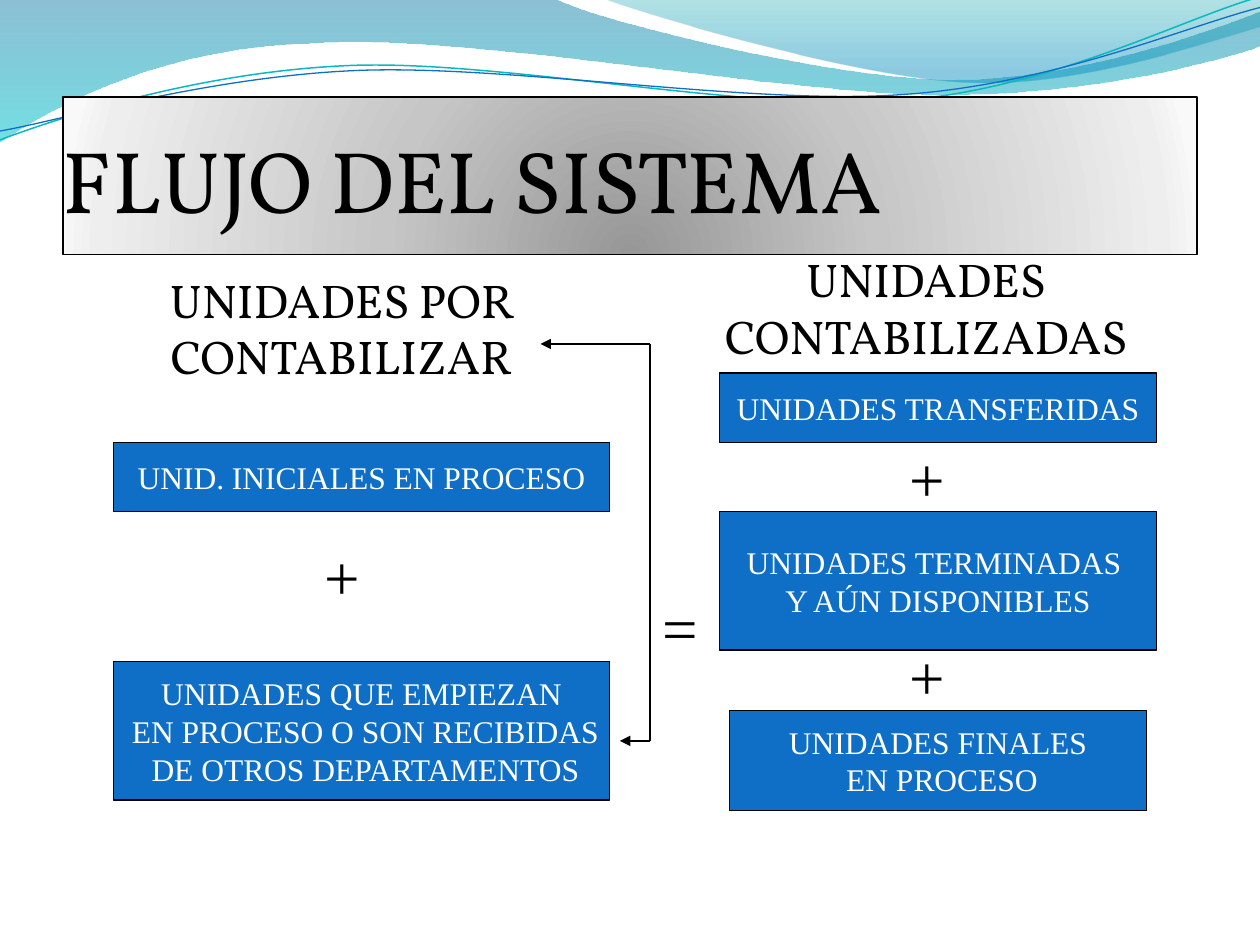
from dataclasses import dataclass
from math import cos, radians, sin

from lxml import etree
from pptx import Presentation
from pptx.dml.color import RGBColor
from pptx.enum.shapes import MSO_CONNECTOR, MSO_SHAPE
from pptx.enum.text import MSO_ANCHOR, PP_ALIGN
from pptx.oxml import parse_xml
from pptx.oxml.ns import qn
from pptx.util import Inches, Pt

RECT = MSO_SHAPE.RECTANGLE
LINE = MSO_CONNECTOR.STRAIGHT
LEFT, CENTER = PP_ALIGN.LEFT, PP_ALIGN.CENTER
TOP, MIDDLE = MSO_ANCHOR.TOP, MSO_ANCHOR.MIDDLE
NS = "http://schemas.openxmlformats.org/drawingml/2006/main"


@dataclass(frozen=True)
class Theme:
    """Colours, fonts and type sizes of the slide."""
    ink: str = "000000"
    paper: str = "FFFFFF"
    blue: str = "0F6FC6"
    teal: str = "0AB8BF"
    serif: str = "Times New Roman"
    display: str = "Vollkorn"
    title: int = 50
    head: int = 27
    label: int = 18
    sign: int = 36
    rule: float = 0.75
    deep: tuple = ((0, "0074A1", 45), (100, "00C6CF", 55))
    pale: tuple = ((0, "00A1A9", 30), (80, "008BBF", 45))
    gray: tuple = ((0, "979797", 100), (43, "C6C6C6", 100),
                   (93, "EEEEEE", 100), (100, "F9F9F9", 100))


THEME = Theme()
TILT = 2.7
DOWN = '<a:lin ang="5400000" scaled="0"/>'
GLOW = ('<a:path path="circle"><a:fillToRect l="50000" t="130000" '
        'r="50000" b="-30000"/></a:path>')

BANDS = [
    (THEME.deep, (0, 0), [
        (4.4, -0.01), (4.76, 0.17, 6.64, 0.63, 7.58, 0.63),
        (8.53, 0.63, 9.58, 0.26, 10, 0.09), (10.01, 0.36),
        (9.83, 0.44, 8.7, 0.76, 7.46, 0.75),
        (6.22, 0.75, 3.82, 0.28, 2.57, 0.34),
        (1.29, 0.36, 0.46, 0.83, -0.01, 1.13), (0, 0)]),
    (THEME.pale, (4.79, -0.01), [
        (5.09, 0.11, 6.82, 0.62, 7.69, 0.65),
        (8.56, 0.69, 9.61, 0.32, 10, 0.21), (10, 0), (4.79, -0.01)]),
]
CURVES = [
    (THEME.teal, 0.85, (4.99, 0.58), (0, 1.11), [
        (0.48, 0.93, 1.58, 0.57, 2.77, 0.52),
        (3.95, 0.47, 5.93, 0.89, 7.13, 0.8),
        (8.33, 0.71, 9.38, 0.15, 9.98, -0.02)]),
    (THEME.blue, 0.75, (5, 0.59), (0, 1.04), [
        (0.47, 0.96, 1.64, 0.61, 2.83, 0.56),
        (4.03, 0.51, 5.97, 0.84, 7.17, 0.75),
        (8.36, 0.67, 9.41, 0.21, 10, 0.06)]),
]
HEADS = [
    ((0.35, 2.1, 4.42, 1.18), "\tUNIDADES POR CONTABILIZAR"),
    ((4.99, 1.94, 4.42, 1.1), "\tUNIDADES CONTABILIZADAS"),
]
LEFTS = [
    ((0.9, 3.51, 3.94, 0.55), ["UNID. INICIALES EN PROCESO"]),
    ((0.9, 5.25, 3.94, 1.1), ["UNIDADES QUE EMPIEZAN",
                              " EN PROCESO O SON RECIBIDAS",
                              " DE OTROS DEPARTAMENTOS"]),
]
RIGHTS = [
    ((5.71, 2.96, 3.47, 0.55), ["UNIDADES TRANSFERIDAS"]),
    ((5.71, 4.06, 3.47, 1.1), ["UNIDADES TERMINADAS ", "Y AÚN DISPONIBLES"]),
    ((5.79, 5.64, 3.31, 0.79), ["UNIDADES FINALES", " EN PROCESO"]),
]
PLUS = [((2.48, 4.22, 1.02, 0.7), "+")]
SIGNS = [
    ((5.16, 4.62, 0.47, 0.7), "="),
    ((7.12, 3.44, 1.02, 0.7), "+"),
    ((7.12, 5.01, 1.02, 0.7), "+"),
]
LINKS = [
    ((5.16, 2.73, 5.16, 5.88), False),
    ((5.16, 5.88, 4.92, 5.88), True),
    ((5.16, 2.73, 4.29, 2.73), True),
]


def scale(nums):
    """Turn inch numbers into lengths."""
    return [Inches(n) for n in nums]


def put(item, vals):
    """Set each named value on an item."""
    for name, val in vals.items():
        setattr(item, name, val)


def ink(line, color, width):
    """Colour and size a line."""
    line.color.rgb = RGBColor.from_string(color)
    line.width = Pt(width)


def blend(shape, stops, way):
    """Fill a shape with a gradient."""
    shape.fill.background()
    marks = "".join(
        f'<a:gs pos="{pos * 1000}"><a:srgbClr val="{color}">'
        f'<a:alpha val="{alpha * 1000}"/></a:srgbClr></a:gs>'
        for pos, color, alpha in stops)
    grad = parse_xml(f'<a:gradFill xmlns:a="{NS}" rotWithShape="1">'
                     f'<a:gsLst>{marks}</a:gsLst>{way}</a:gradFill>')
    props = shape.element.spPr
    props.replace(props.find(qn("a:noFill")), grad)


def turn(spot, hub, angle):
    """Turn a point clockwise about a hub."""
    x, y = spot[0] - hub[0], spot[1] - hub[1]
    c, s = cos(radians(angle)), sin(radians(angle))
    return hub[0] + x * c - y * s, hub[1] + x * s + y * c


def add_wave(slide, start, steps, close, hub=(0, 0), angle=0):
    """Add an outline of straight and cubic steps."""
    spots = [start] + [step[i:i + 2] for step in steps
                       for i in range(0, len(step), 2)]
    first, *rest = [scale(turn(spot, hub, angle)) for spot in spots]
    pen = slide.shapes.build_freeform(*first)
    pen.add_line_segments(rest, close=close)
    wave = pen.convert_to_shape()
    put(wave, {"rotation": -angle % 360})
    wave.shadow.inherit = False
    legs = iter(list(wave.element.spPr.iter(qn("a:lnTo"))))
    for step in steps:
        lead = next(legs)
        if len(step) == 6:
            lead.tag = qn("a:cubicBezTo")
            for leg in (next(legs), next(legs)):
                lead.append(leg[0])
                leg.getparent().remove(leg)
    return wave


def write(shape, lines, font, size, color, align=LEFT, **frame):
    """Write lines of text into a shape."""
    text = shape.text_frame
    put(text, {"word_wrap": True, "vertical_anchor": TOP, **frame})
    for i, words in enumerate(lines):
        para = text.add_paragraph() if i else text.paragraphs[0]
        para.alignment = align
        run = para.add_run()
        run.text = words
        put(run.font, {"name": font, "size": Pt(size)})
        run.font.color.rgb = RGBColor.from_string(color)


def add_frame(slide, place):
    """Add a framed rectangle."""
    box = slide.shapes.add_shape(RECT, *scale(place))
    box.shadow.inherit = False
    ink(box.line, THEME.ink, THEME.rule)
    return box


def add_box(slide, place, lines):
    """Add a blue box with its label."""
    box = add_frame(slide, place)
    box.fill.solid()
    box.fill.fore_color.rgb = RGBColor.from_string(THEME.blue)
    write(box, lines, THEME.serif, THEME.label, THEME.paper, CENTER,
          word_wrap=False, vertical_anchor=MIDDLE)


def add_head(slide, place, words):
    """Add a column heading with a hanging indent."""
    head = slide.shapes.add_textbox(*scale(place))
    write(head, [words], THEME.display, THEME.head, THEME.ink, CENTER)
    props = head.text_frame.paragraphs[0]._p.get_or_add_pPr()
    props.set("marL", str(Inches(0.3)))
    props.set("indent", str(Inches(-0.3)))


def add_sign(slide, place, words):
    """Add a plus or equals sign."""
    sign = slide.shapes.add_textbox(*scale(place))
    write(sign, [words], THEME.serif, THEME.sign, THEME.ink)


def add_link(slide, ends, arrow):
    """Add a line, with an arrowhead if wanted."""
    link = slide.shapes.add_connector(LINE, *scale(ends))
    ink(link.line, THEME.ink, THEME.rule)
    props = link.element.spPr
    if arrow:
        etree.SubElement(props.find(qn("a:ln")), qn("a:tailEnd"), type="triangle")
    etree.SubElement(props, qn("a:effectLst"))


def main():
    """Build and save the slide."""
    deck = Presentation()
    put(deck, {"slide_width": Inches(10), "slide_height": Inches(7.5)})
    slide = deck.slides.add_slide(deck.slide_layouts[6])
    for stops, start, steps in BANDS:
        band = add_wave(slide, start, steps, True)
        blend(band, stops, DOWN)
        band.line.fill.background()
    for color, width, hub, start, steps in CURVES:
        curve = add_wave(slide, start, steps, False, hub, TILT)
        curve.fill.background()
        ink(curve.line, color, width)
    for add, items in ((add_head, HEADS), (add_box, LEFTS), (add_sign, PLUS),
                       (add_box, RIGHTS), (add_link, LINKS), (add_sign, SIGNS)):
        for item in items:
            add(slide, *item)
    title = add_frame(slide, (0.5, 0.77, 9, 1.25))
    blend(title, THEME.gray, GLOW)
    write(title, ["FLUJO DEL SISTEMA"], THEME.display, THEME.title, THEME.ink,
          vertical_anchor=MIDDLE, margin_left=0, margin_right=0,
          margin_top=Inches(0.05), margin_bottom=0)
    deck.save("out.pptx")


if __name__ == "__main__":
    main()
